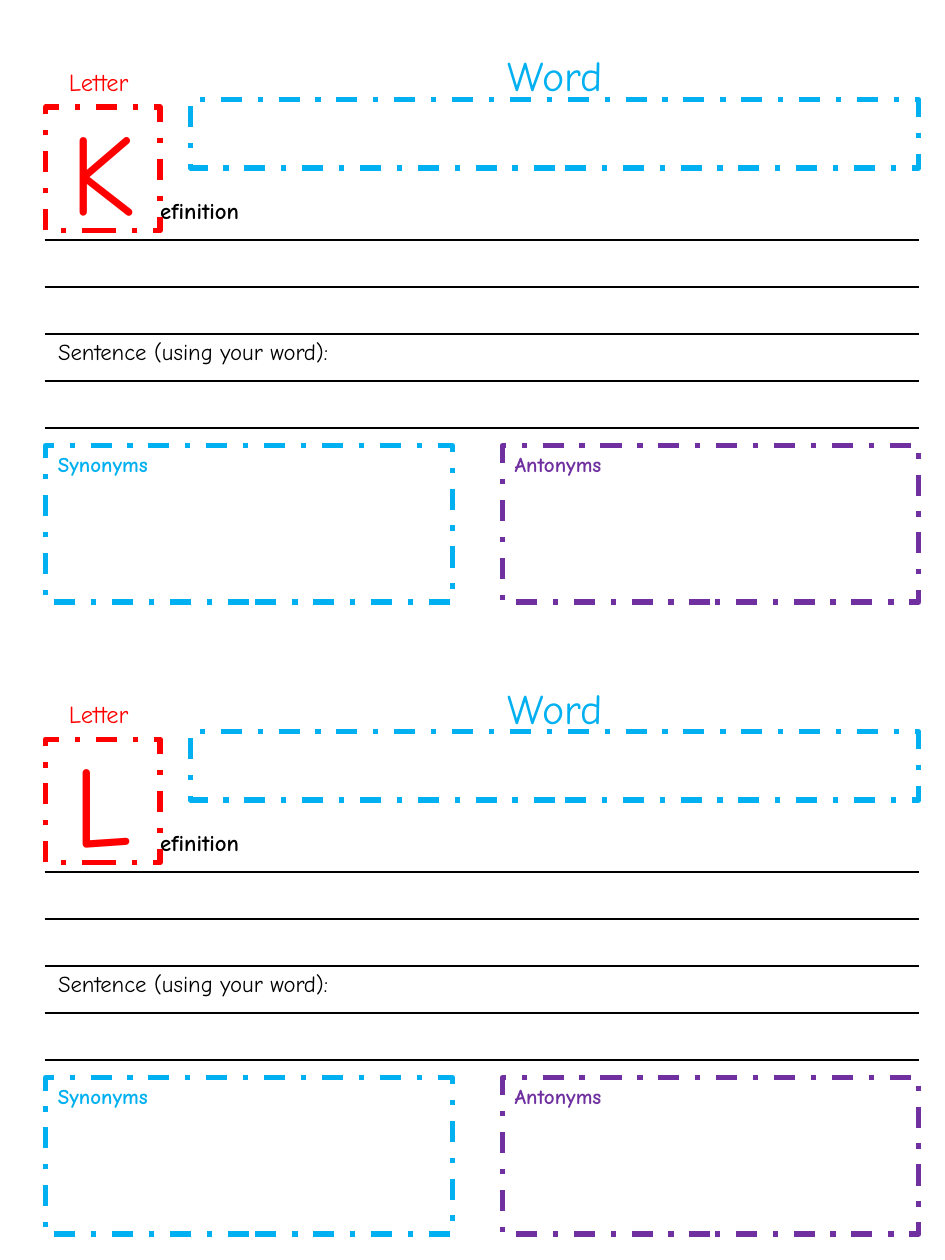
from lxml import etree
from pptx import Presentation
from pptx.dml.color import RGBColor
from pptx.enum import dml, shapes, text
from pptx.oxml import ns
from pptx.util import Pt

RED = RGBColor(0xFF, 0x00, 0x00)
BLUE = RGBColor(0x00, 0xB0, 0xF0)
PURPLE = RGBColor(0x70, 0x30, 0xA0)
BLACK = RGBColor(0x00, 0x00, 0x00)
WHITE = RGBColor(0xFF, 0xFF, 0xFF)

FONT = "Comic Neue"
LEFT = 26
WIDTH = 499
STEP = 361.2
ROWS = 5
ROW = 26.9


def write(frame, words, size=12, color=BLACK, bold=False, align=text.PP_ALIGN.LEFT):
    par = frame.paragraphs[0]
    par.alignment = align
    run = par.add_run()
    run.text = words
    run.font.name = FONT
    run.font.size = Pt(size)
    run.font.bold = bold
    run.font.color.rgb = color


def edge(cell, side, color, order):
    line = etree.Element(ns.qn("a:ln" + side), w=str(Pt(1)))
    fill = etree.SubElement(line, ns.qn("a:solidFill"))
    etree.SubElement(fill, ns.qn("a:srgbClr"), val=str(color))
    cell._tc.get_or_add_tcPr().insert(order, line)


class Sheet:
    def __init__(self, slide, top=0):
        self.slide = slide
        self.top = top

    def place(self, left, top, width, height):
        return Pt(left), Pt(self.top + top), Pt(width), Pt(height)

    def box(self, left, top, width, height, color, fill=None):
        box = self.slide.shapes.add_shape(
            shapes.MSO_SHAPE.RECTANGLE, *self.place(left, top, width, height))
        box.shadow.inherit = False
        if fill is None:
            box.fill.background()
        else:
            box.fill.solid()
            box.fill.fore_color.rgb = fill
        box.line.color.rgb = color
        box.line.width = Pt(3)
        box.line.dash_style = dml.MSO_LINE.DASH_DOT
        box.text_frame.word_wrap = True
        box.text_frame.vertical_anchor = text.MSO_ANCHOR.TOP
        return box.text_frame

    def label(self, left, top, width, height, words, size, color):
        frame = self.slide.shapes.add_textbox(
            *self.place(left, top, width, height)).text_frame
        frame.word_wrap = True
        frame.auto_size = text.MSO_AUTO_SIZE.SHAPE_TO_FIT_TEXT
        write(frame, words, size=size, color=color, align=text.PP_ALIGN.CENTER)

    def lines(self, top):
        table = self.slide.shapes.add_table(
            ROWS, 2, *self.place(LEFT, top, WIDTH, ROWS * ROW)).table
        table.first_row = False
        table.horz_banding = False
        for row in table.rows:
            row.height = Pt(ROW)
        for i in range(ROWS):
            for cell in table.rows[i].cells:
                cell.margin_top = cell.margin_bottom = 0
                cell.fill.solid()
                cell.fill.fore_color.rgb = WHITE
                colors = (WHITE, WHITE, BLACK if i else WHITE, BLACK)
                for order, (side, color) in enumerate(zip("LRTB", colors)):
                    edge(cell, side, color, order)
        first, second = table.cell(0, 0), table.cell(3, 0)
        first.margin_left = Pt(57.5)
        for cell in (first, second):
            cell.margin_top = cell.margin_bottom = Pt(3.6)
        write(first.text_frame, "Definition", size=13, bold=True)
        write(second.text_frame, "Sentence (using your word):", size=13)

    def card(self, letter):
        self.lines(110.2)
        frame = self.box(LEFT, 61.2, 65.5, 70.6, RED, fill=WHITE)
        frame.vertical_anchor = text.MSO_ANCHOR.MIDDLE
        write(frame, letter, size=66, color=RED, align=text.PP_ALIGN.CENTER)
        self.label(LEFT, 34.7, 65.5, 24.5, "Letter ", 14, RED)
        self.box(108.8, 57, 416.2, 39, BLUE)
        self.label(243.4, 25, 147.6, 36, "Word", 24, BLUE)
        for words, left, width, color in (
                ("Synonyms", LEFT, 232.6, BLUE), ("Antonyms", 287, 238, PURPLE)):
            frame = self.box(left, 254.7, width, 89.3, color)
            write(frame, words, color=color, bold=True)


def main():
    deck = Presentation()
    deck.slide_width, deck.slide_height = Pt(540), Pt(720)
    sheet = Sheet(deck.slides.add_slide(deck.slide_layouts[6]))
    for i, letter in enumerate("KL"):
        sheet.top = i * STEP
        sheet.card(letter)
    deck.save("out.pptx")


if __name__ == "__main__":
    main()
